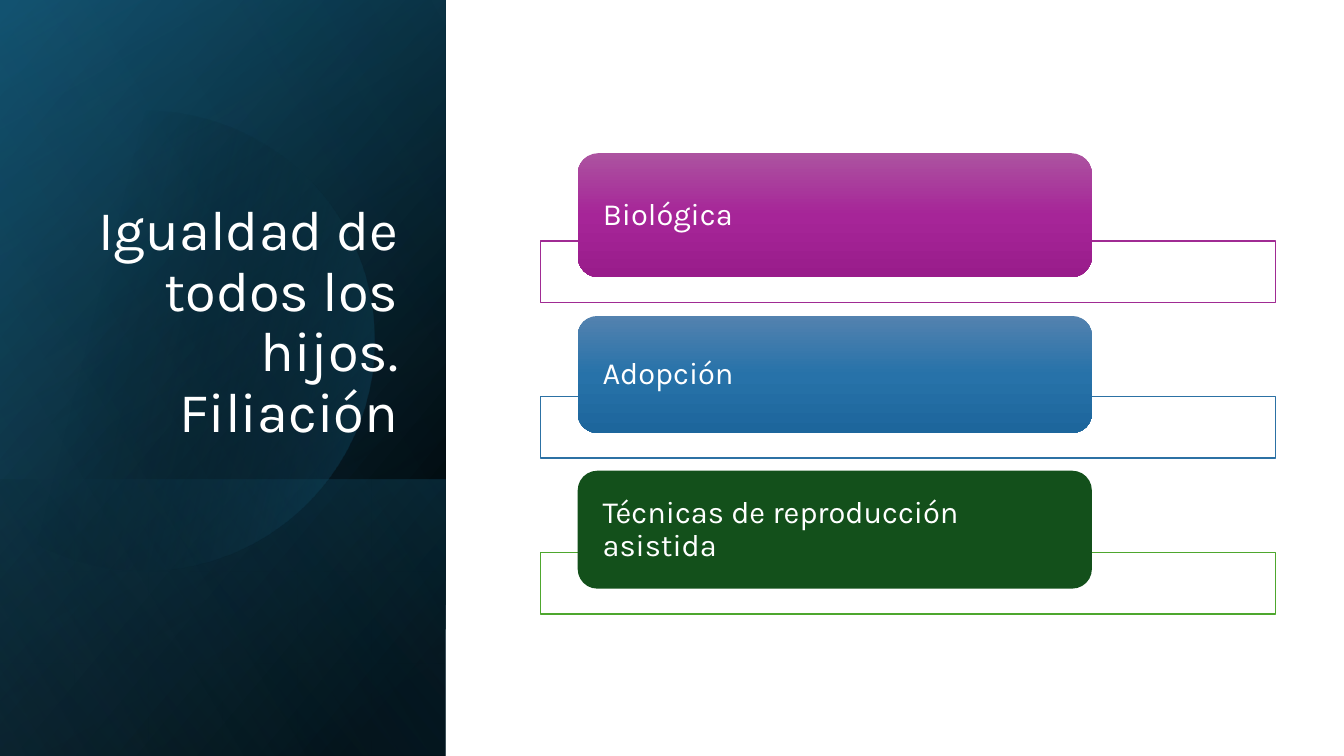
from math import cos, radians, sin

from lxml.etree import SubElement
from pptx import Presentation
from pptx.dml.color import RGBColor
from pptx.enum.shapes import MSO_SHAPE
from pptx.enum.text import MSO_ANCHOR, MSO_AUTO_SIZE, PP_ALIGN
from pptx.oxml.ns import qn
from pptx.util import Inches, Pt

WHITE = RGBColor(0xFF, 0xFF, 0xFF)
BLACK = RGBColor(0x00, 0x00, 0x00)
NAVY = RGBColor(0x10, 0x48, 0x62)
TEAL = RGBColor(0x15, 0x60, 0x82)
SKY = RGBColor(0x46, 0xB1, 0xE1)
PURPLE = RGBColor(0xA0, 0x2B, 0x93)
PURPLE_TOP = RGBColor(0xAC, 0x53, 0xA0)
PURPLE_MID = RGBColor(0xA6, 0x25, 0x98)
PURPLE_END = RGBColor(0x99, 0x1C, 0x8B)
BLUE = RGBColor(0x2C, 0x71, 0xA4)
BLUE_TOP = RGBColor(0x53, 0x82, 0xAF)
BLUE_MID = RGBColor(0x27, 0x72, 0xA9)
BLUE_END = RGBColor(0x1D, 0x66, 0x9C)
GREEN = RGBColor(0x4E, 0xA7, 0x2E)
DARK_GREEN = RGBColor(0x13, 0x50, 0x1B)

FONT = "Karla"
PANEL_WIDTH = 4.42
ROW_TOP = 2.39
ROW_STEP = 1.545
CARD_OVERLAP = 0.36

PANEL_LAYERS = [
    (0, 7.5, 50, [(8, BLACK, 100), (100, NAVY, 100)]),
    (0, 7.5, 30, [(0, BLACK, 0), (99, TEAL, 46)]),
    (4.76, 2.74, 130, [(2, TEAL, 29), (100, BLACK, 30)]),
]
GLOW_LAYER = (0, 7.5, 120, [(0, BLACK, 0), (99, SKY, 11)])

ROWS = [
    ("Biológica", 1.23, PURPLE, [PURPLE_TOP, PURPLE_MID, PURPLE_END]),
    ("Adopción", 1.16, BLUE, [BLUE_TOP, BLUE_MID, BLUE_END]),
    ("Técnicas de reproducción asistida", 1.17, GREEN, [DARK_GREEN]),
]


def fill_gradient(sp, stops, angle):
    sp.fill.gradient()
    grad = sp._element.spPr.find(qn("a:gradFill"))
    for child in list(grad):
        grad.remove(child)
    stop_list = SubElement(grad, qn("a:gsLst"))
    for position, color, opacity in stops:
        gs = SubElement(stop_list, qn("a:gs"), pos=str(position * 1000))
        clr = SubElement(gs, qn("a:srgbClr"), val=str(color))
        if opacity < 100:
            SubElement(clr, qn("a:alpha"), val=str(opacity * 1000))
    SubElement(grad, qn("a:lin"), ang=str(angle * 60000), scaled="0")


def add_box(slide, kind, left, top, width, height, fill=None, line=None):
    sp = slide.shapes.add_shape(
        kind, Inches(left), Inches(top), Inches(width), Inches(height))
    sp.shadow.inherit = False
    if fill is not None:
        sp.fill.solid()
        sp.fill.fore_color.rgb = fill
    if line is None:
        sp.line.fill.background()
    else:
        sp.line.color.rgb = line
        sp.line.width = Pt(1)
    return sp


def add_panel_layer(slide, top, height, angle, stops):
    left = (PANEL_WIDTH - height) / 2
    turned_top = top + (height - PANEL_WIDTH) / 2
    sp = add_box(slide, MSO_SHAPE.RECTANGLE, left, turned_top, height, PANEL_WIDTH)
    sp.rotation = 90
    sp._element.spPr.find(qn("a:xfrm")).set("flipH", "1")
    fill_gradient(sp, stops, angle)


def add_disc(slide):
    center_x, center_y, radius = 1.43, 3.38, 2.28
    points = [
        (Inches(center_x + radius * cos(radians(a))),
         Inches(center_y + radius * sin(radians(a))))
        for a in range(-128, 129, 2)
    ]
    builder = slide.shapes.build_freeform(*points[0])
    builder.add_line_segments(points[1:], close=True)
    sp = builder.convert_to_shape()
    sp.shadow.inherit = False
    sp.line.fill.background()
    fill_gradient(sp, [(29, BLACK, 0), (100, TEAL, 43)], 14)


def set_text(sp, text, size, align=PP_ALIGN.LEFT, anchor=MSO_ANCHOR.MIDDLE,
             side=0.1, edge=0.05):
    tf = sp.text_frame
    tf.word_wrap = True
    tf.auto_size = MSO_AUTO_SIZE.NONE
    tf.vertical_anchor = anchor
    tf.margin_left = tf.margin_right = Inches(side)
    tf.margin_top = tf.margin_bottom = Inches(edge)
    p = tf.paragraphs[0]
    p.alignment = align
    p.line_spacing = 0.9
    p.space_before = Pt(0)
    r = p.add_run()
    r.text = text
    r.font.name = FONT
    r.font.size = Pt(size)
    r.font.color.rgb = WHITE


def add_title(slide):
    title = slide.shapes.title
    title.left, title.top = Inches(0.64), Inches(1.84)
    title.width, title.height = Inches(3.41), Inches(2.62)
    set_text(title, "Igualdad de todos los hijos. Filiación", 40,
             align=PP_ALIGN.RIGHT, anchor=MSO_ANCHOR.BOTTOM)
    slide.shapes._spTree.append(title._element)


def add_row(slide, top, text, height, accent, colors):
    add_box(slide, MSO_SHAPE.RECTANGLE, 5.36, top, 7.29, 0.61, WHITE, accent)
    card = add_box(slide, MSO_SHAPE.ROUNDED_RECTANGLE, 5.73,
                   top + CARD_OVERLAP - height, 5.1, height, colors[0])
    if len(colors) > 1:
        fill_gradient(card, [(50 * i, c, 100) for i, c in enumerate(colors)], 90)
    set_text(card, text, 22, side=0.19, edge=0)


def main():
    prs = Presentation()
    prs.slide_width, prs.slide_height = Inches(13.33), Inches(7.5)
    slide = prs.slides.add_slide(prs.slide_layouts[5])
    for layer in PANEL_LAYERS:
        add_panel_layer(slide, *layer)
    add_disc(slide)
    add_panel_layer(slide, *GLOW_LAYER)
    add_title(slide)
    for i, row in enumerate(ROWS):
        add_row(slide, ROW_TOP + i * ROW_STEP, *row)
    prs.save("out.pptx")


if __name__ == "__main__":
    main()
